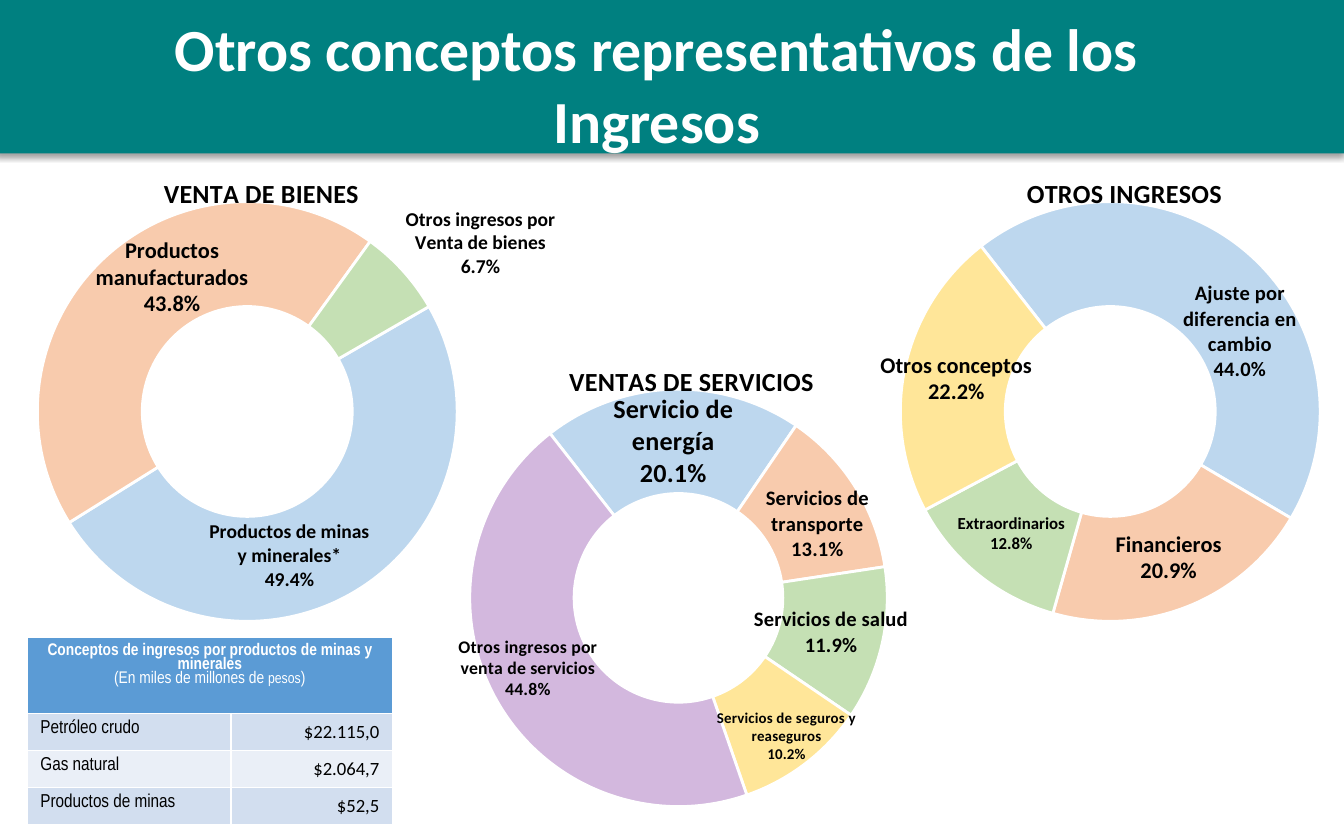
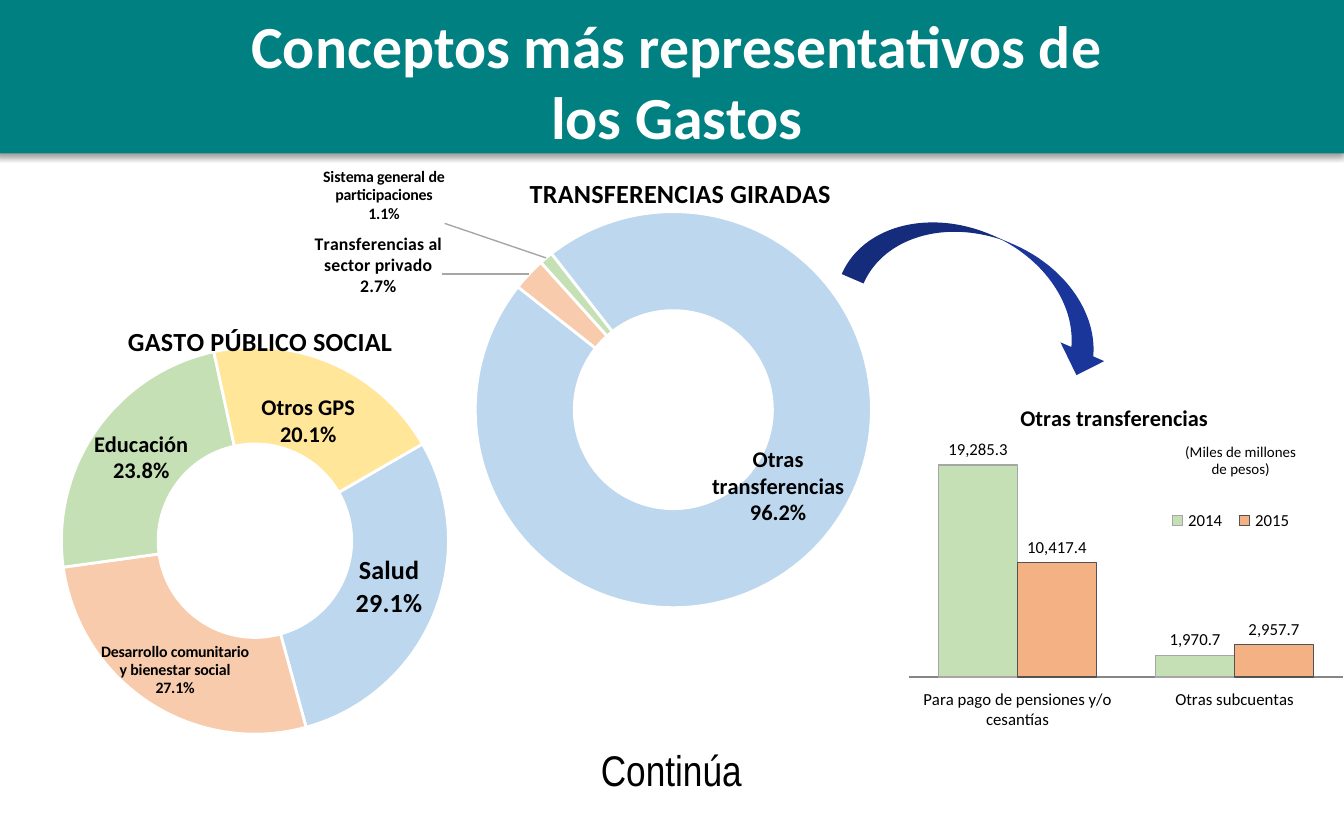
"""Build two slides of doughnut charts on public income and spending."""
import pptx
import pptx.chart.data
import pptx.dml.color
import pptx.enum.chart
import pptx.enum.shapes
import pptx.enum.text
import pptx.oxml
import pptx.oxml.ns
import pptx.util
from pptx.util import Cm, Pt

COLORS = {
    "teal": "008080", "white": "FFFFFF", "black": "000000", "blue": "BDD7EE",
    "orange": "F8CBAD", "green": "C5E0B4", "yellow": "FFE699", "purple": "D3B8DE",
    "header": "5B9BD5", "odd": "D2DEEF", "even": "EAEFF7", "arrow": "1B369A",
    "amber": "F4B183", "gray": "A6A6A6", "dark": "525252", "axis": "868686",
}
RGB = {k: pptx.dml.color.RGBColor.from_string(v) for k, v in COLORS.items()}
SLICES = ["blue", "orange", "green", "yellow", "purple"]
NS = pptx.oxml.ns.nsdecls("c", "a")
ALIGN = pptx.enum.text.PP_ALIGN
ANCHOR = pptx.enum.text.MSO_ANCHOR
CHART = pptx.enum.chart.XL_CHART_TYPE
MSO = pptx.enum.shapes.MSO_SHAPE


def write(p, text, size=10, font="Calibri", color="black", bold=False, align=None):
    if align is not None:
        p.alignment = align
    r = p.add_run()
    r.text = text
    r.font.size = Pt(size)
    r.font.name = font
    r.font.bold = bold
    r.font.color.rgb = RGB[color]


def layout_xml(x, y, w=None, h=None, inner=False, edge=True):
    parts = ['<c:layoutTarget val="inner"/>'] if inner else []
    if edge:
        parts += ['<c:xMode val="edge"/>', '<c:yMode val="edge"/>']
    for tag, value in zip("xywh", (x, y, w, h)):
        if value is not None:
            parts.append(f'<c:{tag} val="{value}"/>')
    return f'<c:layout {NS}><c:manualLayout>{"".join(parts)}</c:manualLayout></c:layout>'


prs = pptx.Presentation()
prs.slide_width, prs.slide_height = Cm(25.4), Cm(15.88)
layout = prs.slide_layouts[5]

titles = [
    ("Otros conceptos representativos de los Ingresos", 1.5, 0.1, 21.82, 2.84),
    ("Conceptos más representativos de los Gastos", 4.09, 0.03, 17.4, 3.07),
]
slides = []
for text, x, y, w, h in titles:
    s = prs.slides.add_slide(layout)
    sp = s.shapes.title
    sp.left, sp.top, sp.width, sp.height = Cm(x), Cm(y), Cm(w), Cm(h)
    tf = sp.text_frame
    tf.word_wrap = True
    tf.auto_size = pptx.enum.text.MSO_AUTO_SIZE.NONE
    tf.vertical_anchor = ANCHOR.TOP
    write(tf.paragraphs[0], text, size=32, color="white", bold=True, align=ALIGN.CENTER)
    slides.append(s)

band = slides[0].shapes.add_shape(MSO.RECTANGLE, Cm(-0.1), Cm(-0.05), Cm(25.5), Cm(2.95))
band.fill.solid()
band.fill.fore_color.rgb = RGB["teal"]
band.line.fill.background()
band.shadow.inherit = False
band.element.spPr.find(pptx.oxml.ns.qn("a:effectLst")).append(pptx.oxml.parse_xml(
    f'<a:outerShdw {NS} blurRad="40000" dist="20000" dir="5400000" rotWithShape="0">'
    f'<a:srgbClr val="{COLORS["black"]}"><a:alpha val="38000"/></a:srgbClr></a:outerShdw>'))
layout.shapes.element.insert(2, band.element)

RING = (0.098, 0.095, 0.777, 0.873)
doughnuts = [
    dict(slide=0, at=(6.88, 6.5, 12.22, 9.04), title="VENTAS DE SERVICIOS",
         title_at=(0.31, 0.03), start=322, plot=RING, size=10, leaders=0, slices=[
             ("Servicio de energía", 20.1, 14, 0, 0, 0.22),
             ("Servicios de transporte", 13.1, 11, 0.01, 0.02, 0.19),
             ("Servicios de salud", 11.9, 11, 0, 0, 0.27),
             ("Servicios de seguros y reaseguros", 10.2, 8, 0.02, 0.03, 0.24),
             ("Otros ingresos por venta de servicios", 44.8, 9.5, -0.02, -0.01, 0.24)]),
    dict(slide=0, at=(-1.27, 2.95, 12.22, 9.09), title="VENTA DE BIENES",
         title_at=(0.35, 0.03), start=60, plot=RING, size=12, leaders=0, slices=[
             ("Productos de minas y minerales*", 49.4, 10.5, -0.06, 0.02, 0.27),
             ("Productos manufacturados", 43.8, 12, 0.05, -0.04, 0.26),
             ("Otros ingresos por Venta de bienes", 6.7, 10.5, 0.18, -0.13, 0.26)]),
    dict(slide=0, at=(15.04, 2.95, 12.22, 9.09), title="OTROS INGRESOS",
         title_at=(0.35, 0.03), start=322, plot=RING, size=12, leaders=0, slices=[
             ("Ajuste por diferencia en cambio", 44, 11, 0.04, 0.08, 0.19),
             ("Financieros", 20.9, 12, 0, 0, 0.2),
             ("Extraordinarios", 12.8, 9, 0, 0, 0.2),
             ("Otros conceptos", 22.2, 12, 0, 0, 0.27)]),
    dict(slide=1, at=(-0.1, 5.77, 10.11, 8.38), title="GASTO PÚBLICO SOCIAL",
         title_at=(0.24, 0.03), start=60, plot=RING, size=12, leaders=0, slices=[
             ("Salud", 29.1, 14, 0, -0.02, 0.18),
             ("Desarrollo comunitario y bienestar social", 27.1, 8.5, 0, 0.02, 0.23),
             ("Educación", 23.8, 12, 0.01, 0, 0.22),
             ("Otros GPS", 20.1, 12, -0.01, 0.03, 0.22)]),
    dict(slide=1, at=(4.14, 2.69, 14.1, 8.99), title="TRANSFERENCIAS GIRADAS",
         title_at=(0.41, 0.06), start=322, plot=(0.343, 0.146, 0.532, 0.833), size=12,
         leaders=1, slices=[
             ("Otras transferencias", 96.2, 12, 0, -0.06, 0.2),
             ("Transferencias al sector privado", 2.7, 9.5, -0.25, -0.09, 0.19),
             ("Sistema general de participaciones", 1.1, 8.5, -0.26, -0.21, 0.2)]),
]
SHOW = ('<c:showLegendKey val="0"/><c:showVal val="0"/><c:showCatName val="1"/>'
        '<c:showSerName val="0"/><c:showPercent val="1"/><c:showBubbleSize val="0"/>'
        '<c:separator>\n</c:separator>')
C15 = "http://schemas.microsoft.com/office/drawing/2012/chart"

for d in doughnuts:
    data = pptx.chart.data.CategoryChartData()
    data.categories = [row[0] for row in d["slices"]]
    data.add_series("Series 1", [row[1] for row in d["slices"]])
    chart = slides[d["slide"]].shapes.add_chart(
        CHART.DOUGHNUT, *map(Cm, d["at"]), data).chart
    chart.font.size, chart.font.name = Pt(10), "Calibri"
    chart.font.color.rgb = RGB["black"]
    chart.has_legend = False
    chart.has_title = True
    write(chart.chart_title.text_frame.paragraphs[0], d["title"], size=14, bold=True)
    plot = chart.plots[0]
    plot.has_data_labels = False
    plot.vary_by_categories = True
    ser = plot.series[0]
    for i, color in enumerate(SLICES[:len(d["slices"])]):
        fmt = ser.points[i].format
        fmt.fill.solid()
        fmt.fill.fore_color.rgb = RGB[color]
        fmt.line.color.rgb = RGB["white"]
        fmt.line.width = Pt(1.5)

    labels = ser.data_labels
    labels.font.size, labels.font.bold, labels.font.name = Pt(d["size"]), True, "Calibri"
    labels.font.color.rgb = RGB["black"]
    labels.number_format, labels.number_format_is_linked = "0.0%", False
    labels.show_value = False
    labels.show_percentage = labels.show_category_name = True
    xml = chart.element
    box = xml.xpath(".//c:ser/c:dLbls")[0]
    for old in box.xpath("c:showLeaderLines"):
        box.remove(old)
    box.append(pptx.oxml.parse_xml(f'<c:separator {NS}>\n</c:separator>'))
    box.append(pptx.oxml.parse_xml(f'<c:showLeaderLines {NS} val="{d["leaders"]}"/>'))
    if d["leaders"]:
        box.append(pptx.oxml.parse_xml(
            f'<c:leaderLines {NS}><c:spPr><a:ln w="9525"><a:solidFill>'
            f'<a:srgbClr val="{COLORS["gray"]}"/></a:solidFill></a:ln></c:spPr></c:leaderLines>'))
    for i, (name, value, size, dx, dy, width) in enumerate(d["slices"]):
        box.insert(i, pptx.oxml.parse_xml(
            f'<c:dLbl {NS}><c:idx val="{i}"/>{layout_xml(dx, dy, edge=False)}'
            '<c:numFmt formatCode="0.0%" sourceLinked="0"/><c:spPr><a:noFill/></c:spPr>'
            f'<c:txPr><a:bodyPr/><a:p><a:pPr><a:defRPr sz="{int(size * 100)}" b="1"><a:solidFill>'
            f'<a:srgbClr val="{COLORS["black"]}"/></a:solidFill><a:latin typeface="Calibri"/>'
            f'</a:defRPr></a:pPr><a:endParaRPr lang="es-CO"/></a:p></c:txPr>{SHOW}'
            '<c:extLst><c:ext uri="{CE6537A1-D6FC-4f65-9D91-7224C49458BB}" '
            f'xmlns:c15="{C15}"><c15:layout><c:manualLayout><c:w val="{width}"/>'
            '<c:h val="0.15"/></c:manualLayout></c15:layout></c:ext></c:extLst></c:dLbl>'))

    xml.xpath(".//c:firstSliceAng")[0].set("val", str(d["start"]))
    xml.xpath(".//c:holeSize")[0].set("val", "38")
    for old in xml.xpath("c:chart/c:title/c:layout | c:chart/c:plotArea/c:layout"):
        old.getparent().remove(old)
    xml.xpath("c:chart/c:title/c:tx")[0].addnext(
        pptx.oxml.parse_xml(layout_xml(*d["title_at"])))
    xml.xpath("c:chart/c:plotArea")[0].insert(
        0, pptx.oxml.parse_xml(layout_xml(*d["plot"], inner=True)))

table = slides[0].shapes.add_table(4, 2, Cm(0.51), Cm(12.04), Cm(6.91), Cm(3.56)).table
for col, width in zip(table.columns, (3.86, 3.05)):
    col.width = Cm(width)
for row, height in zip(table.rows, (1.45, 0.7, 0.7, 0.7)):
    row.height = Cm(height)
head = table.cell(0, 0)
head.merge(table.cell(0, 1))
head.fill.solid()
head.fill.fore_color.rgb = RGB["header"]
tf = head.text_frame
narrow = dict(font="Arial Narrow", color="white", align=ALIGN.CENTER)
write(tf.paragraphs[0], "Conceptos de ingresos por productos de minas y minerales",
      size=9, bold=True, **narrow)
p = tf.add_paragraph()
for text, size in (("(En miles de millones de ", 9), ("pesos", 8), (")", 9)):
    write(p, text, size=size, **narrow)
for p in tf.paragraphs:
    p.line_spacing = 0.9
minerals = [("Petróleo crudo", "$22.115,0"), ("Gas natural", "$2.064,7"),
            ("Productos de minas", "$52,5")]
for i, (name, amount) in enumerate(minerals, 1):
    for j, text in enumerate((name, amount)):
        cell = table.cell(i, j)
        cell.fill.solid()
        cell.fill.fore_color.rgb = RGB["odd" if i % 2 else "even"]
        cell.vertical_anchor = ANCHOR.MIDDLE if j else ANCHOR.TOP
        write(cell.text_frame.paragraphs[0], text, font="Calibri" if j else "Arial Narrow",
              align=ALIGN.RIGHT if j else ALIGN.LEFT)

s = slides[1]
data = pptx.chart.data.CategoryChartData()
data.categories = ["Para pago de pensiones y/o cesantías", "Otras subcuentas"]
data.add_series("2014", [19285300000, 1970700000])
data.add_series("2015", [10417400000, 2957700000])
chart = s.shapes.add_chart(
    CHART.COLUMN_CLUSTERED, Cm(16.56), Cm(7.21), Cm(8.84), Cm(6.58), data).chart
chart.font.size, chart.font.name = Pt(9), "Calibri"
chart.font.color.rgb = RGB["black"]
chart.has_title = True
write(chart.chart_title.text_frame.paragraphs[0], "Otras transferencias", size=12, bold=True)
chart.has_legend = True
chart.legend.position = pptx.enum.chart.XL_LEGEND_POSITION.BOTTOM
chart.legend.include_in_layout = False
plot = chart.plots[0]
plot.gap_width, plot.overlap = 75, 0
plot.vary_by_categories = False
for ser, color, edge in zip(plot.series, ("green", "amber"), ("gray", "dark")):
    ser.format.fill.solid()
    ser.format.fill.fore_color.rgb = RGB[color]
    ser.format.line.color.rgb = RGB[edge]
    ser.format.line.width = Pt(0.75)
    labels = ser.data_labels
    labels.show_value = True
    labels.number_format = r"_(* #,##0.0,,_);_(* \(#,##0.0,,\)"
    labels.number_format_is_linked = False
    labels.position = pptx.enum.chart.XL_LABEL_POSITION.OUTSIDE_END
axis = chart.value_axis
axis.minimum_scale, axis.maximum_scale = 0, 25000000000
axis.has_major_gridlines = False
axis.visible = False
axis = chart.category_axis
axis.major_tick_mark = pptx.enum.chart.XL_TICK_MARK.NONE
axis.tick_label_position = pptx.enum.chart.XL_TICK_LABEL_POSITION.LOW
axis.format.line.color.rgb = RGB["axis"]
axis.format.line.width = Pt(1)
xml = chart.element
for old in xml.xpath("c:chart/*/c:layout"):
    old.getparent().remove(old)
xml.xpath("c:chart/c:title/c:tx")[0].addnext(pptx.oxml.parse_xml(layout_xml(0.3, 0.05)))
xml.xpath("c:chart/c:legend/c:legendPos")[0].addnext(
    pptx.oxml.parse_xml(layout_xml(0.61, 0.36, 0.3, 0.08)))
xml.xpath("c:chart/c:plotArea")[0].insert(
    0, pptx.oxml.parse_xml(layout_xml(0.07, 0.06, 0.93, 0.79, inner=True)))

notes = [
    ("(Miles de millones de pesos)", 22.35, 8.36, 2.2, 1.2, 0, dict(size=8)),
    ("Continúa", 10.39, 13.92, 4.6, 1.24, 0.13, dict(size=23, font="Arial Narrow")),
]
for text, x, y, w, h, margin, fmt in notes:
    tf = s.shapes.add_textbox(Cm(x), Cm(y), Cm(w), Cm(h)).text_frame
    tf.word_wrap = True
    tf.margin_left = tf.margin_right = tf.margin_top = tf.margin_bottom = Cm(margin)
    write(tf.paragraphs[0], text, align=ALIGN.CENTER, **fmt)

arrow = s.shapes.add_shape(MSO.CURVED_DOWN_ARROW, Cm(16.05), Cm(4.5), Cm(5.28), Cm(1.8))
arrow.rotation = 23.3
arrow.shadow.inherit = False
arrow.fill.solid()
arrow.fill.fore_color.rgb = RGB["arrow"]
arrow.line.fill.background()

prs.save("out.pptx")
